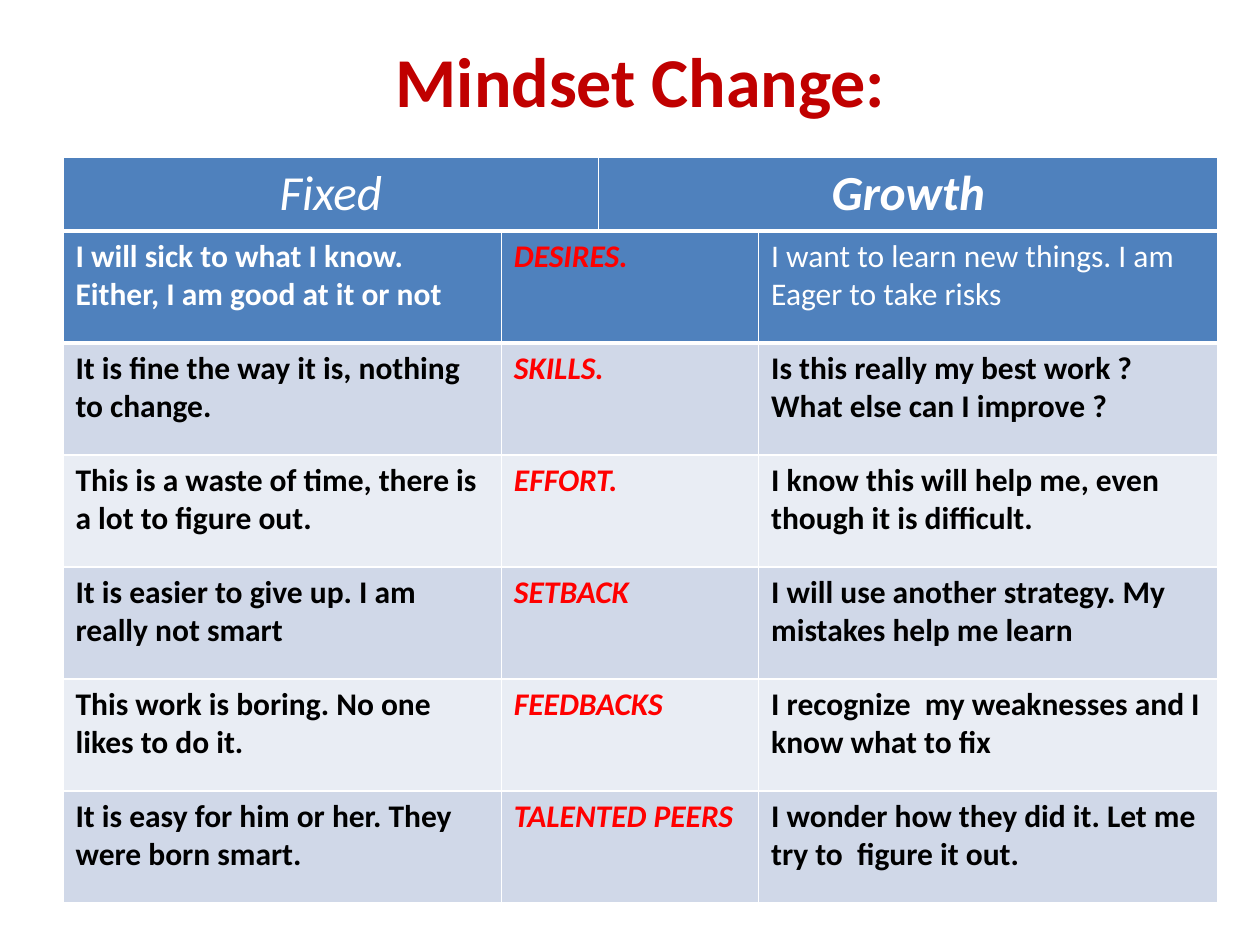
from pptx import Presentation
from pptx.dml.color import RGBColor as Rgb
from pptx.enum.text import MSO_AUTO_SIZE as AutoSize, PP_ALIGN as Align
from pptx.oxml.ns import qn
from pptx.util import Pt
from lxml.etree import SubElement

COLORS = {
    "title": "C00000", "header": "4F81BD", "band_dark": "D0D8E8",
    "band_light": "E9EDF4", "white": "FFFFFF", "black": "000000", "red": "FF0000",
}
LEFT, WIDTH = 36, 660
HEADER_TOP, HEADER_HEIGHT = 90, 42
ROW_HEIGHT = 64

MINDSETS = [
    ("I will sick to what I know. Either, I am good at it or not", "DESIRES.",
     "I want to learn new things. I am Eager to take risks"),
    ("It is fine the way it is, nothing to change.", "SKILLS.",
     "Is this really my best work ? What else can I improve ?"),
    ("This is a waste of time, there is a lot to figure out.", "EFFORT.",
     "I know this will help me, even though it is difficult."),
    ("It is easier to give up. I am really not smart", "SETBACK",
     "I will use another strategy. My mistakes help me learn"),
    ("This work is boring. No one likes to do it.", "FEEDBACKS",
     "I recognize  my weaknesses and I know what to fix"),
    ("It is easy for him or her. They were born smart.", "TALENTED PEERS",
     "I wonder how they did it. Let me try to  figure it out."),
]


class SlideBuilder:
    def __init__(self, page, font="Calibri"):
        self.page = page
        self.font = font

    def text_run(self, para, text, size, color, bold=False, italic=False, align=Align.LEFT):
        para.alignment = align
        span = para.add_run()
        span.text = text
        font = span.font
        font.name, font.size = self.font, Pt(size)
        font.bold, font.italic = bold, italic
        font.color.rgb = Rgb.from_string(COLORS[color])

    def title(self, text, left, top, width, height):
        box = self.page.shapes.add_textbox(Pt(left), Pt(top), Pt(width), Pt(height))
        frame = box.text_frame
        frame.word_wrap = True
        frame.auto_size = AutoSize.SHAPE_TO_FIT_TEXT
        self.text_run(frame.paragraphs[0], text, 40, "title", bold=True, align=Align.CENTER)

    def table(self, left, top, column_widths, row_height, row_count):
        """Add a table without banding, ready for cell()."""
        frame = self.page.shapes.add_table(
            row_count, len(column_widths), Pt(left), Pt(top),
            Pt(sum(column_widths)), Pt(row_height * row_count))
        table = frame.table
        table.first_row = table.horz_banding = False
        for column, width in zip(table.columns, column_widths):
            column.width = Pt(width)
        for row in table.rows:
            row.height = Pt(row_height)
        return table

    def cell(self, cell, text, fill, bottom_border=1, **style):
        properties = cell._tc.get_or_add_tcPr()
        for side, weight in zip("LRTB", (1, 1, 1, bottom_border)):
            line = SubElement(properties, qn(f"a:ln{side}"), w=str(Pt(weight)))
            solid = SubElement(line, qn("a:solidFill"))
            SubElement(solid, qn("a:srgbClr"), val=COLORS["white"])
        cell.fill.solid()
        cell.fill.fore_color.rgb = Rgb.from_string(COLORS[fill])
        self.text_run(cell.text_frame.paragraphs[0], text, **style)


def main():
    deck = Presentation()
    deck.slide_width, deck.slide_height = Pt(720), Pt(540)
    builder = SlideBuilder(deck.slides.add_slide(deck.slide_layouts[6]))

    grid = builder.table(LEFT, HEADER_TOP + HEADER_HEIGHT, [250.5, 147, 262.5],
                         ROW_HEIGHT, len(MINDSETS))
    for row, texts in enumerate(MINDSETS):
        first = row == 0
        fill = "header" if first else ("band_light", "band_dark")[row % 2]
        for column, text in enumerate(texts):
            topic = column == 1
            color = "red" if topic else "white" if first else "black"
            builder.cell(grid.cell(row, column), text, fill,
                         bottom_border=3 if first else 1, size=18, color=color,
                         bold=not (first and column == 2), italic=topic)

    header = builder.table(LEFT, HEADER_TOP, [306, WIDTH - 306], HEADER_HEIGHT, 1)
    for column, text in enumerate(("Fixed", "Growth")):
        builder.cell(header.cell(0, column), text, "header", bottom_border=3, size=28,
                     color="white", bold=text == "Growth", italic=True,
                     align=Align.CENTER)

    builder.title("Mindset Change:", LEFT, 18, WIDTH, 55.5)
    deck.save("out.pptx")


if __name__ == "__main__":
    main()
